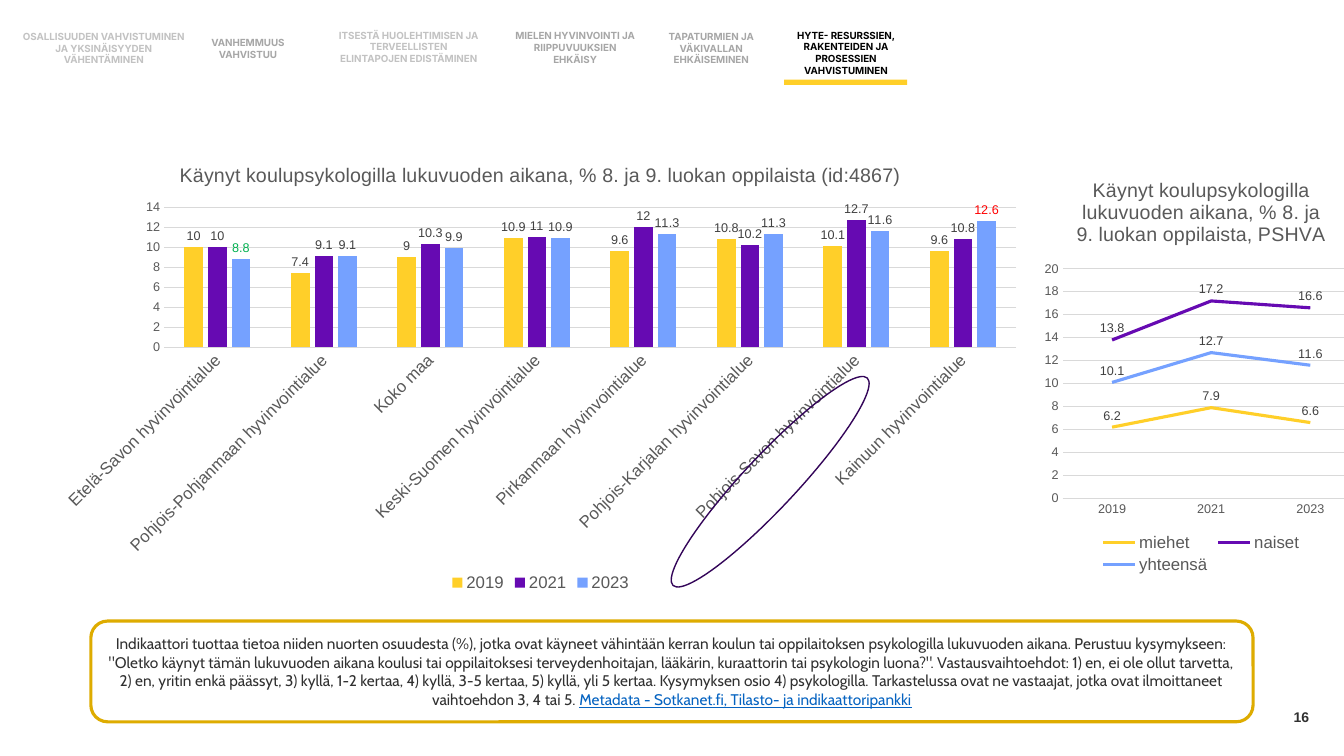
from lxml import etree
from pptx import Presentation
from pptx.chart.data import CategoryChartData
from pptx.dml.color import RGBColor
from pptx.enum.chart import XL_CHART_TYPE, XL_LABEL_POSITION, XL_LEGEND_POSITION, XL_TICK_MARK
from pptx.enum.shapes import MSO_SHAPE
from pptx.enum.text import MSO_ANCHOR, PP_ALIGN
from pptx.oxml import parse_xml
from pptx.oxml.ns import nsdecls, qn
from pptx.util import Cm, Pt

COLUMNS, LINES = XL_CHART_TYPE.COLUMN_CLUSTERED, XL_CHART_TYPE.LINE
OUTSIDE, ABOVE = XL_LABEL_POSITION.OUTSIDE_END, XL_LABEL_POSITION.ABOVE
BOTTOM, NO_TICK = XL_LEGEND_POSITION.BOTTOM, XL_TICK_MARK.NONE
RECTANGLE, ROUNDED, OVAL = MSO_SHAPE.RECTANGLE, MSO_SHAPE.ROUNDED_RECTANGLE, MSO_SHAPE.OVAL
MIDDLE, CENTER, RIGHT = MSO_ANCHOR.MIDDLE, PP_ALIGN.CENTER, PP_ALIGN.RIGHT

YELLOW = RGBColor(0xFF, 0xCF, 0x29)
PURPLE = RGBColor(0x66, 0x0A, 0xB2)
BLUE = RGBColor(0x75, 0xA1, 0xFF)
GOLD = RGBColor(0xDE, 0xAC, 0x00)
DARK_PURPLE = RGBColor(0x33, 0x05, 0x59)
LINK_BLUE = RGBColor(0x05, 0x63, 0xC1)
GREEN = RGBColor(0x00, 0xB0, 0x50)
RED = RGBColor(0xFF, 0x00, 0x00)
BLACK = RGBColor(0x00, 0x00, 0x00)
INK = RGBColor(0x30, 0x30, 0x30)
LABEL_GRAY = RGBColor(0x40, 0x40, 0x40)
AXIS_GRAY = RGBColor(0x59, 0x59, 0x59)
TAB_GRAY = RGBColor(0xA6, 0xA6, 0xA6)
PALE_GRAY = RGBColor(0xC2, 0xC2, 0xC2)
GRID_GRAY = RGBColor(0xD9, 0xD9, 0xD9)


def set_font(font, color, **values):
    for name, value in values.items():
        setattr(font, name, value)
    font.color.rgb = color


def add_label(box, lines, alignment, color, **values):
    frame = slide.shapes.add_textbox(*map(Cm, box)).text_frame
    frame.word_wrap = True
    frame.vertical_anchor = MIDDLE
    for side in ("left", "right", "top", "bottom"):
        setattr(frame, f"margin_{side}", 0)
    for index, line in enumerate(lines):
        paragraph = frame.add_paragraph() if index else frame.paragraphs[0]
        paragraph.alignment = alignment
        run = paragraph.add_run()
        run.text = line
        set_font(run.font, color, bold=True, **values)


presentation = Presentation()
presentation.slide_width, presentation.slide_height = Cm(33.87), Cm(19.05)
slide = presentation.slides.add_slide(presentation.slide_layouts[6])

add_label((25.37, 17.55, 7.62, 1.02), ["16"], RIGHT, INK, size=Pt(10), name="Arial")

themes = [
    ((0.56, 0.91, 4.11, 0.61), PALE_GRAY, ["OSALLISUUDEN VAHVISTUMINEN JA YKSINÄISYYDEN VÄHENTÄMINEN"]),
    ((4.7, 1.07, 3.1, 0.3), TAB_GRAY, ["VANHEMMUUS VAHVISTUU"]),
    ((8.51, 0.74, 3.58, 0.89), PALE_GRAY, ["ITSESTÄ HUOLEHTIMISEN JA TERVEELLISTEN ELINTAPOJEN EDISTÄMINEN"]),
    ((12.88, 0.89, 3.23, 0.61), TAB_GRAY, ["MIELEN HYVINVOINTI JA RIIPPUVUUKSIEN EHKÄISY"]),
    ((16.31, 0.91, 3.23, 0.61), TAB_GRAY, ["TAPATURMIEN JA VÄKIVALLAN EHKÄISEMINEN"]),
    ((19.53, 0.89, 3.58, 0.89), BLACK, ["HYTE- RESURSSIEN, RAKENTEIDEN JA PROSESSIEN", "VAHVISTUMINEN"]),
]
for box, color, lines in themes:
    add_label(box, lines, CENTER, color, size=Pt(7), name="Inter")

underline = slide.shapes.add_shape(RECTANGLE, Cm(19.76), Cm(2.01), Cm(3.1), Cm(0.13))
underline.shadow.inherit = False
underline.fill.solid()
underline.fill.fore_color.rgb = YELLOW
underline.line.fill.background()

charts = [
    {
        "type": COLUMNS,
        "box": (1.14, 3.63, 24.97, 11.38),
        "title": "Käynyt koulupsykologilla lukuvuoden aikana, % 8. ja 9. luokan oppilaista (id:4867)",
        "categories": [
            "Etelä-Savon hyvinvointialue", "Pohjois-Pohjanmaan hyvinvointialue", "Koko maa",
            "Keski-Suomen hyvinvointialue", "Pirkanmaan hyvinvointialue",
            "Pohjois-Karjalan hyvinvointialue", "Pohjois-Savon hyvinvointialue",
            "Kainuun hyvinvointialue",
        ],
        "series": {
            "2019": [10, 7.4, 9, 10.9, 9.6, 10.8, 10.1, 9.6],
            "2021": [10, 9.1, 10.3, 11, 12, 10.2, 12.7, 10.8],
            "2023": [8.8, 9.1, 9.9, 10.9, 11.3, 11.3, 11.6, 12.6],
        },
        "maximum": 14, "category_size": 12, "label_position": OUTSIDE,
        "plot": {"x": 0.12, "y": 0.14, "w": 0.86, "h": 0.31},
    },
    {
        "type": LINES,
        "box": (26.11, 4.04, 8.33, 10.52),
        "title": "Käynyt koulupsykologilla lukuvuoden aikana, % 8. ja 9. luokan oppilaista, PSHVA",
        "categories": ["2019", "2021", "2023"],
        "series": {
            "miehet": [6.2, 7.9, 6.6],
            "naiset": [13.8, 17.2, 16.6],
            "yhteensä": [10.1, 12.7, 11.6],
        },
        "maximum": 20, "category_size": 9, "label_position": ABOVE,
        "plot": {"x": 0.08, "y": 0.26, "w": 0.9, "h": 0.55},
    },
]
for details in charts:
    data = CategoryChartData()
    data.categories = details["categories"]
    for name, values in details["series"].items():
        data.add_series(name, values)
    chart = slide.shapes.add_chart(details["type"], *map(Cm, details["box"]), data).chart
    set_font(chart.font, BLACK, size=Pt(10), name="Arial")

    chart.has_title = True
    chart.chart_title.include_in_layout = False
    title_run = chart.chart_title.text_frame.paragraphs[0].add_run()
    title_run.text = details["title"]
    set_font(title_run.font, AXIS_GRAY, size=Pt(14), name="Arial", bold=False)

    chart.has_legend = True
    chart.legend.position = BOTTOM
    chart.legend.include_in_layout = False
    set_font(chart.legend.font, AXIS_GRAY, size=Pt(12), name="Arial")

    for axis, size in ((chart.category_axis, details["category_size"]), (chart.value_axis, 9)):
        axis.major_tick_mark = axis.minor_tick_mark = NO_TICK
        set_font(axis.tick_labels.font, AXIS_GRAY, size=Pt(size), name="Arial")
    chart.value_axis.minimum_scale = 0
    chart.value_axis.maximum_scale = details["maximum"]
    chart.value_axis.major_unit = 2
    chart.value_axis.format.line.fill.background()
    for line in (chart.category_axis.format.line, chart.value_axis.major_gridlines.format.line):
        line.color.rgb = GRID_GRAY
        line.width = Pt(0.75)

    plot = chart.plots[0]
    plot.vary_by_categories = False
    for series, color in zip(plot.series, (YELLOW, PURPLE, BLUE)):
        if details["type"] == LINES:
            series.smooth = False
            series.format.line.color.rgb = color
            series.format.line.width = Pt(2.25)
        else:
            series.format.fill.solid()
            series.format.fill.fore_color.rgb = color
        labels = series.data_labels
        labels.show_value = True
        labels.position = details["label_position"]
        set_font(labels.font, LABEL_GRAY, size=Pt(9), name="Arial")

    if details["type"] == COLUMNS:
        plot.gap_width, plot.overlap = 219, -27
        chart.category_axis.tick_labels.font
        body = chart.category_axis._element.find(qn("c:txPr")).find(qn("a:bodyPr"))
        body.set("rot", "-2700000")
        body.set("vert", "horz")
        for index, color in ((0, GREEN), (7, RED)):
            label = plot.series[2].points[index].data_label
            set_font(label.font, color, size=Pt(9), name="Arial")
            label.position = OUTSIDE

    plot_area = chart._chartSpace.chart.plotArea
    for layout in plot_area.findall(qn("c:layout")):
        plot_area.remove(layout)
    layout = parse_xml(f"<c:layout {nsdecls('c')}><c:manualLayout/></c:layout>")
    settings = {"layoutTarget": "inner", "xMode": "edge", "yMode": "edge", **details["plot"]}
    for name, value in settings.items():
        etree.SubElement(layout[0], qn(f"c:{name}")).set("val", str(value))
    plot_area.insert(0, layout)

outlines = [
    (OVAL, (18.75, 8.56, 1.32, 7.16), DARK_PURPLE, 1, 43.1),
    (ROUNDED, (2.29, 15.65, 29.29, 2.54), GOLD, 2.25, 0),
]
for kind, box, color, width, rotation in outlines:
    shape = slide.shapes.add_shape(kind, *map(Cm, box))
    shape.shadow.inherit = False
    shape.fill.background()
    shape.line.color.rgb = color
    shape.line.width = Pt(width)
    shape.rotation = rotation

frame = shape.text_frame
frame.word_wrap = True
frame.vertical_anchor = MIDDLE
paragraph = frame.paragraphs[0]
paragraph.alignment = CENTER
description = [
    ('Indikaattori tuottaa tietoa niiden nuorten osuudesta (%), jotka ovat käyneet vähintään kerran koulun tai '
     'oppilaitoksen psykologilla lukuvuoden aikana. Perustuu kysymykseen: "Oletko käynyt tämän lukuvuoden aikana '
     'koulusi tai oppilaitoksesi terveydenhoitajan, lääkärin, kuraattorin tai psykologin luona?". '
     'Vastausvaihtoehdot: 1) en, ei ole ollut tarvetta, 2) en, yritin enkä päässyt, 3) kyllä, 1-2 kertaa, '
     '4) kyllä, 3-5 kertaa, 5) kyllä, yli 5 kertaa. Kysymyksen osio 4) psykologilla. Tarkastelussa ovat ne '
     'vastaajat, jotka ovat ilmoittaneet vaihtoehdon 3, 4 tai 5. ', INK, False),
    ("Metadata - Sotkanet.fi, Tilasto- ja indikaattoripankki", LINK_BLUE, True),
]
for text, color, underlined in description:
    run = paragraph.add_run()
    run.text = text
    set_font(run.font, color, size=Pt(11), name="Cabin", underline=underlined)

presentation.save("out.pptx")
